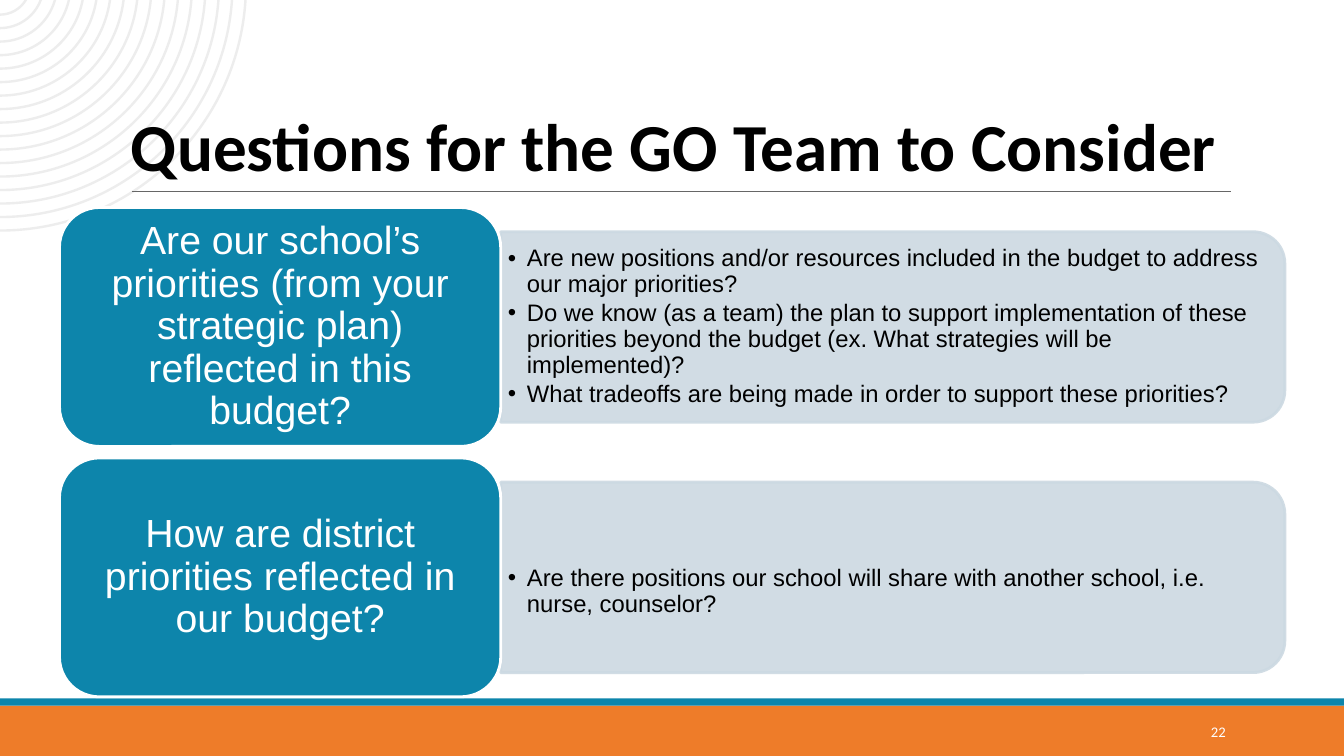
from math import asin, cos, pi, sin, tan

from lxml import etree
from pptx import Presentation
from pptx.dml.color import RGBColor
from pptx.enum.shapes import MSO_CONNECTOR, MSO_SHAPE as SHAPE
from pptx.enum.text import MSO_ANCHOR as ANCHOR, MSO_AUTO_SIZE, PP_ALIGN as ALIGN
from pptx.oxml.ns import qn
from pptx.util import Cm, Pt

BLACK = RGBColor(0x00, 0x00, 0x00)
WHITE = RGBColor(0xFF, 0xFF, 0xFF)
TEAL = RGBColor(0x0D, 0x85, 0xAB)
ORANGE = RGBColor(0xEE, 0x7C, 0x29)
PALE_BLUE = RGBColor(0xCC, 0xD9, 0xE2)
RING_GREY = RGBColor(0xED, 0xED, 0xED)
RULE_GREY = RGBColor(0x66, 0x66, 0x66)

SLIDE_W, SLIDE_H = 33.87, 19.05

TITLE = dict(name="Calibri", size=Pt(48), bold=True, color=BLACK)
NUMBER = dict(name="Calibri", size=Pt(10.5), color=WHITE)
QUESTION = dict(name="Arial", size=Pt(28), color=WHITE)
POINT = dict(name="Arial", size=Pt(17), color=BLACK)

# question, its points, extra space above the points
ROWS = [
    ("Are our school’s priorities (from your strategic plan) reflected in this budget?",
     ["Are new positions and/or resources included in the budget to address "
      "our major priorities?",
      "Do we know (as a team) the plan to support implementation of these priorities "
      "beyond the budget (ex. What strategies will be implemented)?",
      "What tradeoffs are being made in order to support these priorities?"], 0),
    ("How are district priorities reflected in our budget?",
     ["Are there positions our school will share with another school, i.e. "
      "nurse, counselor?"], 0.72),
]


def set_frame(tf, anchor, side=0.25, top=0.13, bottom=0.13):
    values = dict(word_wrap=True, auto_size=MSO_AUTO_SIZE.NONE, vertical_anchor=anchor,
                  margin_left=Cm(side), margin_right=Cm(side),
                  margin_top=Cm(top), margin_bottom=Cm(bottom))
    for name, value in values.items():
        setattr(tf, name, value)


def write(p, text, font, **paragraph):
    r = p.add_run()
    r.text = text
    for name, value in font.items():
        if name == "color":
            r.font.color.rgb = value
        else:
            setattr(r.font, name, value)
    for name, value in paragraph.items():
        setattr(p, name, value)


def add_bullet(p):
    pPr = p._p.get_or_add_pPr()
    pPr.set("marL", str(Cm(0.48)))
    pPr.set("indent", str(-Cm(0.48)))
    etree.SubElement(pPr, qn("a:buFont")).set("typeface", "Arial")
    etree.SubElement(pPr, qn("a:buChar")).set("char", "•")


def paint(sp, fill, line=None):
    sp.shadow.inherit = False
    sp.fill.solid()
    sp.fill.fore_color.rgb = fill
    if line is None:
        sp.line.fill.background()
    else:
        sp.line.color.rgb = line
        sp.line.width = Pt(2)


def add_box(s, kind, x, y, w, h, fill, line=None):
    sp = s.shapes.add_shape(kind, Cm(x), Cm(y), Cm(w), Cm(h))
    paint(sp, fill, line)
    return sp


def arc(r, centre_y):
    """Return the four Bezier points from the top edge round to the left edge."""
    a = asin(-centre_y / r)
    k = r * 4 / 3 * tan((pi / 2 - a) / 4)
    x, y = r * cos(a), centre_y + r * sin(a)
    bottom = centre_y + r
    points = [(x, y), (x - k * sin(a), y + k * cos(a)), (k, bottom), (0, bottom)]
    return [(Cm(px), Cm(py)) for px, py in points]


def curve_rings(sp):
    """Turn the two sides of each ring, three segments each, into Bezier curves."""
    lines = list(sp._element.iter(qn("a:lnTo")))
    for i in range(0, len(lines), 7):
        for side in (lines[i:i + 3], lines[i + 4:i + 7]):
            curve = etree.Element(qn("a:cubicBezTo"))
            side[0].addprevious(curve)
            for line in side:
                curve.append(line[0])
                line.getparent().remove(line)


def add_rings(s, count=17, radius=6.23, step=0.34, width=0.06, centre_y=-0.39):
    """Draw concentric bands, centred just above the top left corner."""
    builder = None
    for i in range(count):
        outer = radius - i * step
        points = arc(outer, centre_y) + arc(outer - width, centre_y)[::-1]
        if builder is None:
            builder = s.shapes.build_freeform(*points[0])
        else:
            builder.move_to(*points[0])
        builder.add_line_segments(points[1:], close=True)
    sp = builder.convert_to_shape()
    curve_rings(sp)
    paint(sp, RING_GREY)


def add_footer(s, x, y, w, h, number):
    stripe = 0.18
    add_box(s, SHAPE.RECTANGLE, x, y + stripe, w, h - stripe, ORANGE)
    add_box(s, SHAPE.RECTANGLE, x, y, w, stripe, TEAL)
    tf = s.shapes.add_textbox(Cm(x + w - 6.36), Cm(y + 0.33), Cm(3.63), Cm(1.02)).text_frame
    set_frame(tf, ANCHOR.MIDDLE)
    write(tf.paragraphs[0], number, NUMBER, alignment=ALIGN.RIGHT)


def add_title(s, x, y, w, h, text):
    rule = s.shapes.add_connector(MSO_CONNECTOR.STRAIGHT, Cm(x + 0.28), Cm(y + h),
                                  Cm(x + w + 0.02), Cm(y + h))
    rule.line.color.rgb = RULE_GREY
    rule.line.width = Pt(0.75)
    etree.SubElement(rule._element.spPr, qn("a:effectLst"))

    title = s.shapes.title
    s.shapes._spTree.append(title._element)  # in front of the rings
    box = dict(left=x, top=y, width=w, height=h)
    for name, value in box.items():
        setattr(title, name, Cm(value))
    set_frame(title.text_frame, ANCHOR.BOTTOM)
    write(title.text_frame.paragraphs[0], text, TITLE,
          alignment=ALIGN.LEFT, line_spacing=0.9)


def add_panel(s, x, y, w, h):
    """Add a translucent panel rounded on its right side: a turned top-rounded shape."""
    sp = add_box(s, SHAPE.ROUND_2_SAME_RECTANGLE, x + (w - h) / 2, y - (w - h) / 2, h, w,
                 PALE_BLUE, PALE_BLUE)
    sp.rotation = 90
    for colour in sp._element.spPr.iter(qn("a:srgbClr")):
        etree.SubElement(colour, qn("a:alpha")).set("val", "90000")


def add_row(s, x, y, w, h, question, points, space_above):
    question_w, panel_h, text_h = 11.12, 4.8, 4.34
    panel_x, panel_w = x + question_w, w - question_w
    add_panel(s, panel_x, y + (h - panel_h) / 2, panel_w, panel_h)

    tf = s.shapes.add_textbox(Cm(panel_x), Cm(y + (h - text_h) / 2),
                              Cm(panel_w - 0.23), Cm(text_h)).text_frame
    set_frame(tf, ANCHOR.MIDDLE, 0.18, 0.1 + space_above, 0.1)
    for i, point in enumerate(points):
        p = tf.add_paragraph() if i else tf.paragraphs[0]
        write(p, point, POINT, alignment=ALIGN.LEFT, line_spacing=0.9, space_after=Pt(2.5))
        add_bullet(p)

    sp = add_box(s, SHAPE.ROUNDED_RECTANGLE, x, y, question_w, h, TEAL, WHITE)
    set_frame(sp.text_frame, ANCHOR.MIDDLE, 0.3, 0.15, 0.15)
    write(sp.text_frame.paragraphs[0], question, QUESTION,
          alignment=ALIGN.CENTER, line_spacing=0.9, space_after=Pt(9.8))


def main():
    prs = Presentation()
    prs.slide_width, prs.slide_height = Cm(SLIDE_W), Cm(SLIDE_H)
    s = prs.slides.add_slide(prs.slide_layouts[5])
    add_rings(s)
    add_footer(s, 0, 17.6, SLIDE_W, SLIDE_H - 17.6, "22")
    add_title(s, 3.05, 0.79, 27.94, 4.04, "Questions for the GO Team to Consider")
    row_h, gap = 6.02, 0.29
    for i, row in enumerate(ROWS):
        add_row(s, 1.5, 5.23 + i * (row_h + gap), 30.88, row_h, *row)
    prs.save("out.pptx")


if __name__ == "__main__":
    main()
